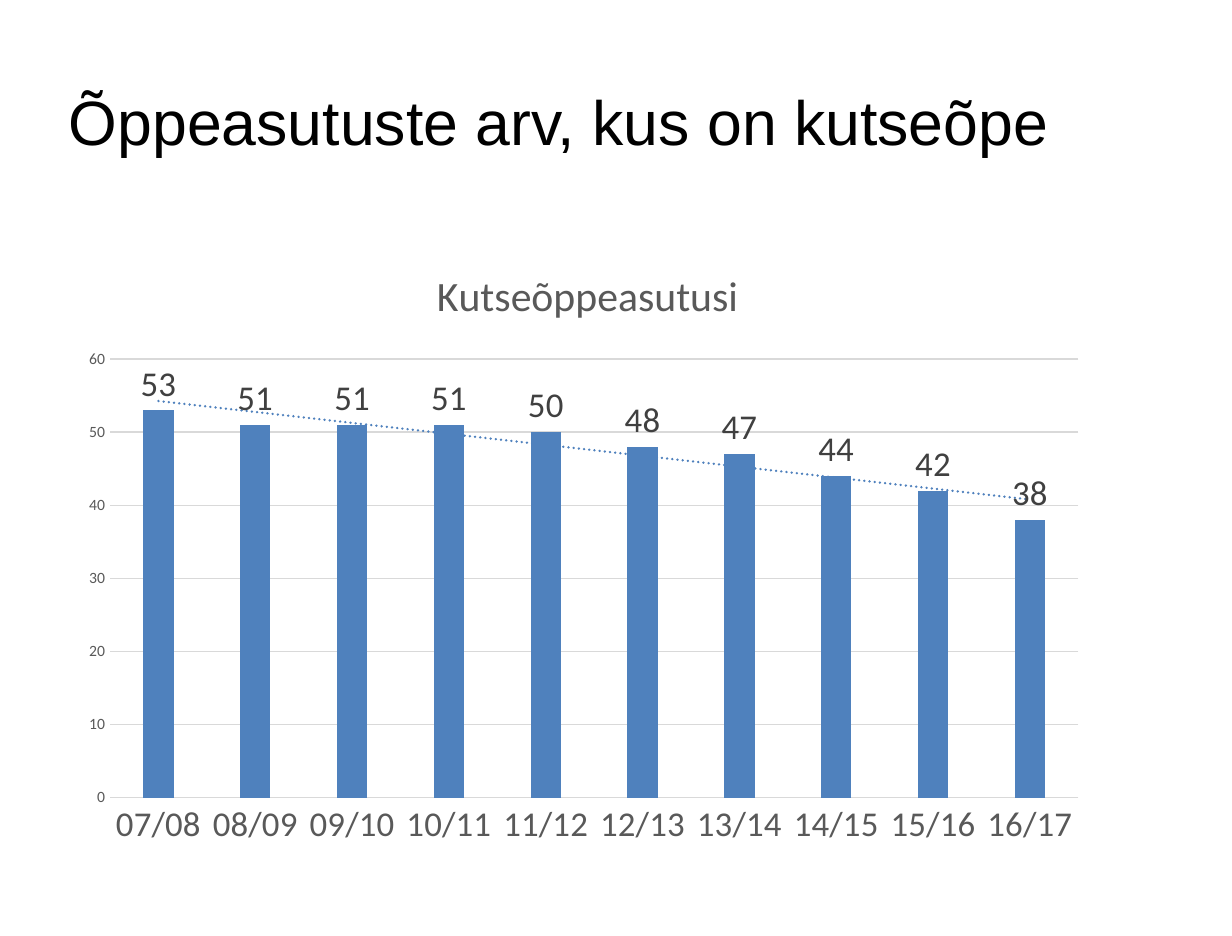
from lxml import etree
from pptx import Presentation
from pptx.chart.data import CategoryChartData
from pptx.dml.color import RGBColor
from pptx.enum.chart import XL_CHART_TYPE as ChartType, XL_LABEL_POSITION as LabelPosition
from pptx.enum.chart import XL_TICK_MARK as TickMark
from pptx.enum.text import MSO_ANCHOR as Anchor
from pptx.oxml import parse_xml
from pptx.oxml.ns import nsdecls, qn
from pptx.util import Cm, Inches, Pt

BLUE, GRID, GREY, DARK, BLACK = "4F81BD", "D9D9D9", "595959", "404040", "000000"
LEFT, WIDTH = Inches(0.55), Inches(8.23)


def set_font(font, size, color, name="Calibri"):
    settings = {"size": Pt(size), "name": name, "bold": False}
    for attribute, value in settings.items():
        setattr(font, attribute, value)
    font.color.rgb = RGBColor.from_string(color)


def manual_layout(**shares):
    """Return a c:layout that places a chart part by shares of the chart's size."""
    layout = parse_xml(f"<c:layout {nsdecls('c')}><c:manualLayout/></c:layout>")
    settings = {"xMode": "edge", "yMode": "edge", **shares}
    if "w" in shares:
        settings = {"layoutTarget": "inner", **settings}
    for tag, value in settings.items():
        etree.SubElement(layout[0], qn(f"c:{tag}")).set("val", str(value))
    return layout


deck = Presentation()
deck.slide_width, deck.slide_height = Cm(25), Cm(19)
slide = deck.slides.add_slide(deck.slide_layouts[6])

# Heading
heading = slide.shapes.add_textbox(LEFT, Inches(0.33), WIDTH, Inches(1.38)).text_frame
heading_format = {
    "word_wrap": True, "vertical_anchor": Anchor.MIDDLE,
    "margin_left": 0, "margin_right": 0, "margin_top": 0, "margin_bottom": 0,
}
for attribute, value in heading_format.items():
    setattr(heading, attribute, value)
heading.text = "Õppeasutuste arv, kus on kutseõpe"
heading.paragraphs[0].line_spacing = 0.8
set_font(heading.paragraphs[0].runs[0].font, 36, BLACK, "Arial")

# Schools per school year
schools = CategoryChartData(number_format="#,##0")
schools.categories = [f"{year:02}/{year + 1:02}" for year in range(7, 17)]
schools.add_series("Series 1", [53, 51, 51, 51, 50, 48, 47, 44, 42, 38])
chart = slide.shapes.add_chart(
    ChartType.COLUMN_CLUSTERED, LEFT, Inches(1.93), WIDTH, Inches(4.94), schools
).chart
set_font(chart.font, 10, BLACK)
chart.has_legend = False

chart.has_title = True
caption = chart.chart_title
caption.text_frame.text = "Kutseõppeasutusi"
set_font(caption.text_frame.paragraphs[0].runs[0].font, 24, GREY)
caption.include_in_layout = False
for old_layout in caption._element.findall(qn("c:layout")):
    caption._element.remove(old_layout)
caption._element.find(qn("c:tx")).addnext(manual_layout(x=0.35, y=0.03))

plot_area = chart._chartSpace.chart.plotArea
for old_layout in plot_area.findall(qn("c:layout")):
    plot_area.remove(old_layout)
plot_area.insert(0, manual_layout(x=0.04, y=0.19, w=0.94, h=0.71))

# Axes
years, counts = chart.category_axis, chart.value_axis
for axis, size in ((years, 20), (counts, 9)):
    axis.major_tick_mark = axis.minor_tick_mark = TickMark.NONE
    set_font(axis.tick_labels.font, size, GREY)
counts.minimum_scale, counts.maximum_scale, counts.major_unit = 0, 60, 10
counts.has_major_gridlines = True
counts.format.line.fill.background()
for line in (years.format.line, counts.major_gridlines.format.line):
    line.width = Pt(0.75)
    line.color.rgb = RGBColor.from_string(GRID)

# Columns and their values
plot = chart.plots[0]
plot.gap_width, plot.overlap, plot.vary_by_categories = 219, -27, False
columns = plot.series[0]
columns.format.fill.solid()
columns.format.fill.fore_color.rgb = RGBColor.from_string(BLUE)
labels = columns.data_labels
label_format = {
    "show_value": True, "position": LabelPosition.OUTSIDE_END,
    "number_format": "#,##0", "number_format_is_linked": False,
}
for attribute, value in label_format.items():
    setattr(labels, attribute, value)
set_font(labels.font, 20, DARK)

# Linear trend
trend = parse_xml(
    f"<c:trendline {nsdecls('c', 'a')}><c:spPr>"
    f'<a:ln w="{Pt(1.5)}" cap="rnd"><a:solidFill><a:srgbClr val="{BLUE}"/></a:solidFill>'
    '<a:prstDash val="sysDot"/></a:ln></c:spPr><c:trendlineType val="linear"/>'
    '<c:dispRSqr val="0"/><c:dispEq val="0"/></c:trendline>'
)
columns._element.find(qn("c:cat")).addprevious(trend)

deck.save("out.pptx")
